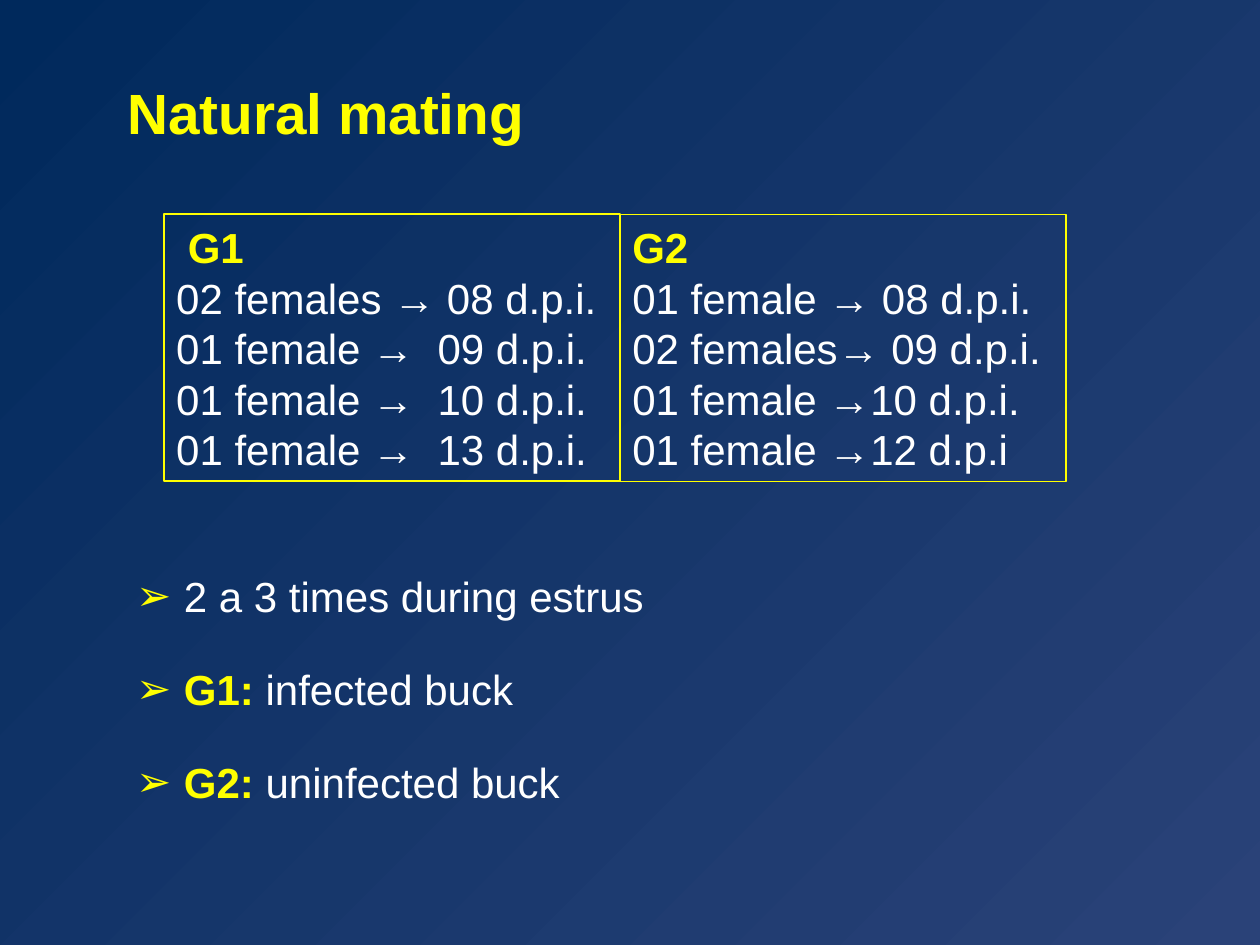
from pptx import Presentation
from pptx.dml.color import RGBColor
from pptx.enum.shapes import MSO_SHAPE
from pptx.enum.text import MSO_ANCHOR, MSO_AUTO_SIZE, PP_ALIGN
from pptx.oxml.ns import qn
from pptx.util import Inches, Pt
from lxml import etree

RECT = MSO_SHAPE.RECTANGLE
MIDDLE, TOP = MSO_ANCHOR.MIDDLE, MSO_ANCHOR.TOP
FIXED = MSO_AUTO_SIZE.NONE
LEFT = PP_ALIGN.LEFT
YELLOW = RGBColor(0xFF, 0xFF, 0x00)
WHITE = RGBColor(0xFF, 0xFF, 0xFF)
NAVY = RGBColor(0x00, 0x29, 0x5C)
INDIGO = RGBColor(0x2A, 0x42, 0x78)


class Painter:
    font = "Arial"
    size = 24

    def __init__(self, slide):
        self.slide = slide

    def backdrop(self, start, end):
        fill = self.slide.background.fill
        fill.gradient()
        fill.gradient_angle = 315
        for stop, color in zip(fill.gradient_stops, (start, end)):
            stop.color.rgb = color

    def place(self, shape, left, top, width, height):
        shape.left, shape.top = Inches(left), Inches(top)
        shape.width, shape.height = Inches(width), Inches(height)

    def frame(self, shape, anchor):
        frame = shape.text_frame
        frame.word_wrap = True
        frame.auto_size = FIXED
        frame.vertical_anchor = anchor
        return frame

    def letter(self, frame, lines, size=None):
        for i, runs in enumerate(lines):
            para = frame.add_paragraph() if i else frame.paragraphs[0]
            para.alignment = LEFT
            for text, strong in runs:
                run = para.add_run()
                run.text = text
                run.font.name = self.font
                run.font.size = Pt(size or self.size)
                run.font.bold = strong
                run.font.color.rgb = YELLOW if strong else WHITE

    def title(self, text, box):
        shape = self.slide.shapes.title
        self.place(shape, *box)
        frame = self.frame(shape, MIDDLE)
        frame.margin_top = Inches(0.15)
        self.letter(frame, [[(text, True)]], 32.4)

    def bullets(self, lines, box):
        shape = self.slide.placeholders[1]
        self.place(shape, *box)
        frame = self.frame(shape, TOP)
        frame.margin_top = Inches(0.23)
        self.letter(frame, lines)
        for para in frame.paragraphs:
            para.line_spacing = 1.6
            para.space_before = Pt(7)
            props = para._p.get_or_add_pPr()
            props.set("marL", str(Inches(0.38)))
            props.set("indent", str(Inches(-0.38)))
            tint = etree.SubElement(props, qn("a:buClr"))
            etree.SubElement(tint, qn("a:srgbClr")).set("val", str(YELLOW))
            etree.SubElement(props, qn("a:buChar")).set("char", "➢")

    def panel(self, lines, box, weight):
        shape = self.slide.shapes.add_shape(RECT, *map(Inches, box))
        shape.shadow.inherit = False
        shape.fill.background()
        shape.line.color.rgb = YELLOW
        shape.line.width = Pt(weight)
        self.letter(self.frame(shape, MIDDLE), lines)


def main():
    deck = Presentation()
    deck.slide_width, deck.slide_height = Inches(10), Inches(7.5)
    paint = Painter(deck.slides.add_slide(deck.slide_layouts[1]))
    paint.backdrop(NAVY, INDIGO)
    paint.title("Natural mating", (0.91, 0.44, 8.59, 0.79))
    paint.bullets([
        [("2 a 3 times during estrus", False)],
        [("G1: ", True), ("infected buck", False)],
        [("G2: ", True), ("uninfected buck", False)],
    ], (0.98, 4.06, 6.31, 2.44))

    groups = [
        (" G1", 3.62, 1, ["02 females → 08 d.p.i.", "01 female →  09 d.p.i.",
                          "01 female →  10 d.p.i.", "01 female →  13 d.p.i."]),
        ("G2", 3.54, 0.75, ["01 female → 08 d.p.i.", "02 females→ 09 d.p.i.",
                            "01 female →10 d.p.i.", "01 female →12 d.p.i"]),
    ]
    left = 1.3
    for name, width, weight, rows in groups:
        lines = [[(name, True)]] + [[(row, False)] for row in rows]
        paint.panel(lines, (left, 1.7, width, 2.12), weight)
        left += width
    deck.save("out.pptx")


if __name__ == "__main__":
    main()
